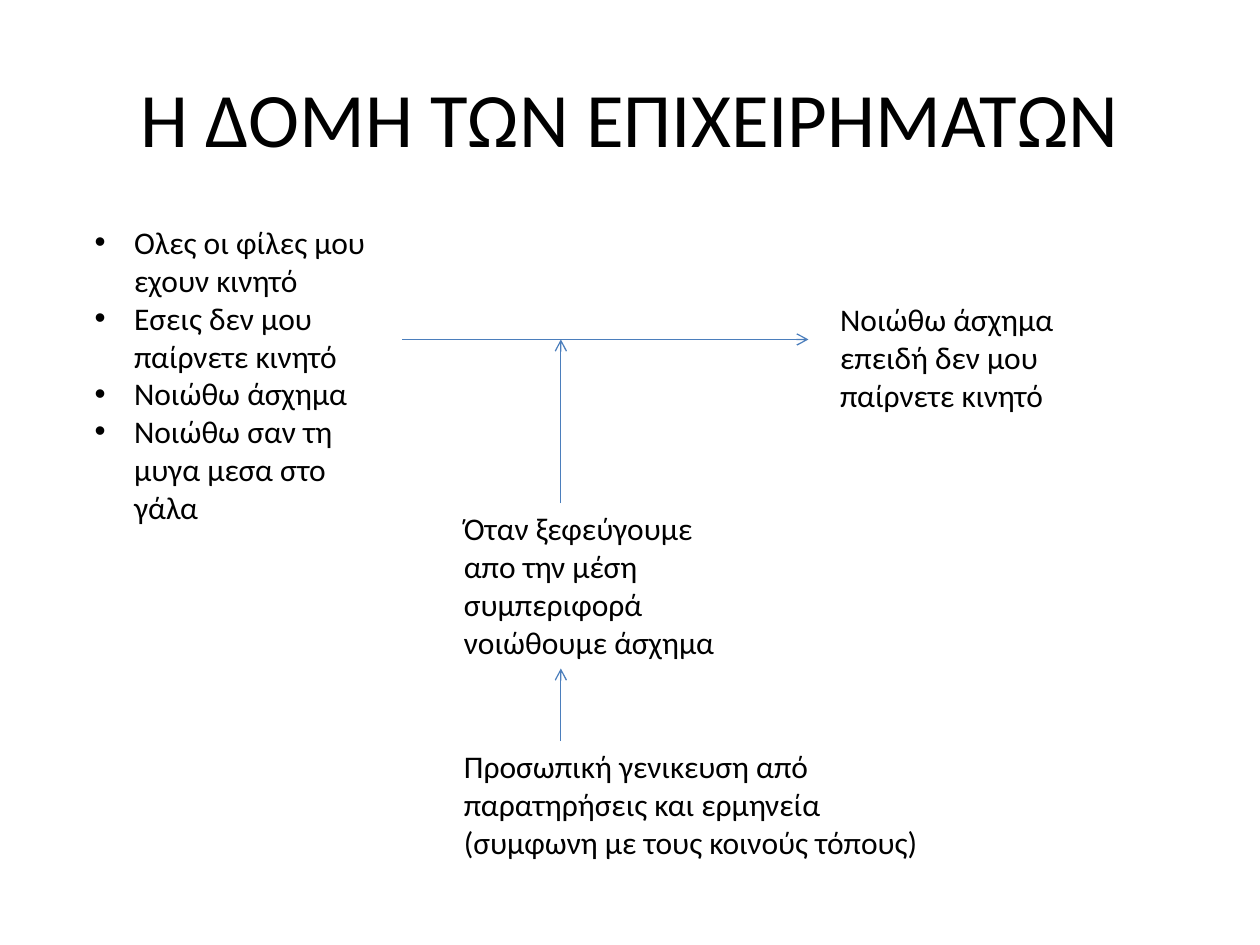
from lxml import etree
from pptx import Presentation
from pptx.dml.color import RGBColor
from pptx.enum.shapes import MSO_CONNECTOR
from pptx.enum.text import MSO_ANCHOR, MSO_AUTO_SIZE, PP_ALIGN
from pptx.oxml.ns import qn
from pptx.util import Pt

STRAIGHT = MSO_CONNECTOR.STRAIGHT
CENTER, LEFT = PP_ALIGN.CENTER, PP_ALIGN.LEFT
MIDDLE, TOP = MSO_ANCHOR.MIDDLE, MSO_ANCHOR.TOP
GROW = MSO_AUTO_SIZE.SHAPE_TO_FIT_TEXT

BLACK = RGBColor(0x00, 0x00, 0x00)
BLUE = RGBColor(0x4B, 0x7E, 0xBC)
FONT = "Calibri"
BULLET_INDENT = 22.5

TITLE = "Η ΔΟΜΗ ΤΩΝ ΕΠΙΧΕΙΡΗΜΑΤΩΝ"
DATA = [
    "Ολες οι φίλες μου εχουν κινητό",
    "Εσεις δεν μου παίρνετε κινητό",
    "Νοιώθω άσχημα",
    "Νοιώθω σαν τη μυγα μεσα στο γάλα",
]
CLAIM = "Νοιώθω άσχημα επειδή δεν μου παίρνετε κινητό"
WARRANT = "Όταν ξεφεύγουμε απο την μέση συμπεριφορά νοιώθουμε άσχημα"
BACKING = ("Προσωπική γενικευση από παρατηρήσεις και ερμηνεία "
           "(συμφωνη με τους κοινούς τόπους)")


def write_text(tf, lines, size=18, align=LEFT, anchor=TOP, bullet=False):
    tf.word_wrap = True
    tf.vertical_anchor = anchor
    for i, line in enumerate(lines):
        p = tf.paragraphs[0] if i == 0 else tf.add_paragraph()
        p.alignment = align
        if bullet:
            pPr = p._p.get_or_add_pPr()
            pPr.set("marL", str(Pt(BULLET_INDENT)))
            pPr.set("indent", str(-Pt(BULLET_INDENT)))
            etree.SubElement(pPr, qn("a:buFont")).set("typeface", "Arial")
            etree.SubElement(pPr, qn("a:buChar")).set("char", "•")
        r = p.add_run()
        r.text = line
        r.font.name = FONT
        r.font.size = Pt(size)
        r.font.color.rgb = BLACK


def add_text(s, box, lines, **fmt):
    tf = s.shapes.add_textbox(*map(Pt, box)).text_frame
    write_text(tf, lines, **fmt)
    tf.auto_size = GROW


def add_arrow(s, x1, y1, x2, y2):
    line = s.shapes.add_connector(STRAIGHT, Pt(x1), Pt(y1), Pt(x2), Pt(y2))
    line.line.color.rgb = BLUE
    line.line.width = Pt(0.75)
    etree.SubElement(line.line._get_or_add_ln(), qn("a:tailEnd")).set("type", "arrow")
    etree.SubElement(line._element.spPr, qn("a:effectLst"))


def add_title(s, box):
    title = s.shapes.title
    title.left, title.top, title.width, title.height = map(Pt, box)
    write_text(title.text_frame, [TITLE], size=44, align=CENTER, anchor=MIDDLE)


def add_argument(s, box):
    """Data lead to a claim; a warrant and its backing support the step."""
    x, y, w, h = box
    axis_y = y + 70
    support_x = x + 211
    stem_x = support_x + 62.5
    claim_x = x + w - 142
    warrant_y, warrant_h = y + 163.5, 94.5
    backing_h = 72.5
    backing_y = y + h - backing_h

    # Data and claim
    add_text(s, (x, y, 175.5, 181.5), DATA, bullet=True)
    add_text(s, (claim_x, axis_y - 26, 142, 72.5), [CLAIM])
    add_arrow(s, x + 183, axis_y, claim_x - 11, axis_y)

    # Warrant and backing
    add_text(s, (support_x, warrant_y, 164, warrant_h), [WARRANT])
    add_text(s, (support_x, backing_y, 286.5, backing_h), [BACKING])
    add_arrow(s, stem_x, warrant_y, stem_x, axis_y)
    add_arrow(s, stem_x, backing_y, stem_x, warrant_y + warrant_h)


def main():
    prs = Presentation()
    prs.slide_width, prs.slide_height = Pt(720), Pt(540)
    s = prs.slides.add_slide(prs.slide_layouts[5])
    add_title(s, (36, 21.6, 648, 90))
    add_argument(s, (47, 124, 568, 372))
    prs.save("out.pptx")


if __name__ == "__main__":
    main()
